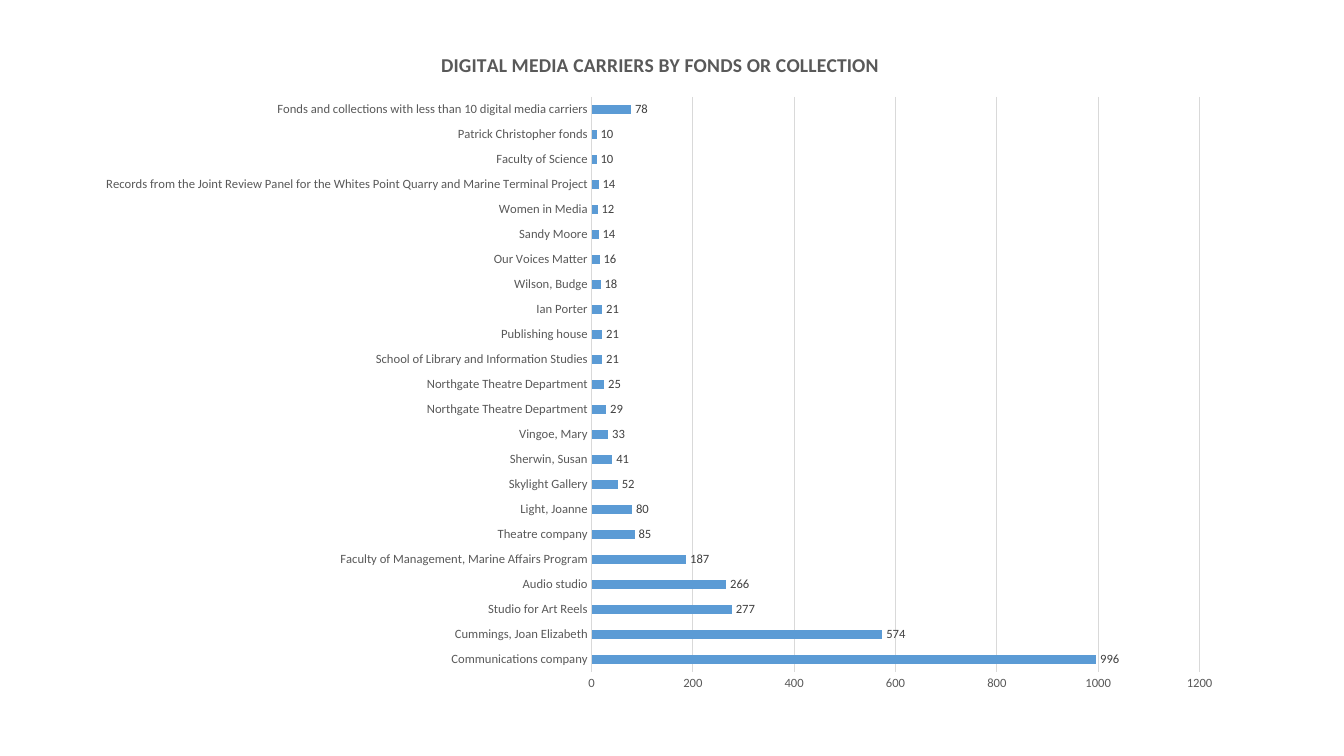
"""Build a slide with a bar chart of digital media carriers by fonds or collection."""
from dataclasses import dataclass
from typing import Any

from lxml import etree
from pptx import Presentation
from pptx import util as u
from pptx.chart import data as chart_data
from pptx.dml import color
from pptx.enum import chart as ch
from pptx.oxml import ns


@dataclass(frozen=True)
class Theme:
    """Colours, font and type sizes."""
    font: str = "Calibri"
    bar: str = "5B9BD5"
    grid: str = "D9D9D9"
    muted: str = "595959"
    value: str = "404040"
    base: str = "000000"
    title_size: int = 14
    base_size: int = 10
    label_size: int = 9


@dataclass(frozen=True)
class Holding:
    """One fonds or collection and its number of carriers."""
    name: str
    carriers: int


THEME = Theme()
TITLE = "DIGITAL MEDIA CARRIERS BY FONDS OR COLLECTION"
PLOT_AREA = {"x": 0.44, "y": 0.1, "w": 0.53, "h": 0.85}
HOLDINGS = [
    Holding("Communications company", 996),
    Holding("Cummings, Joan Elizabeth", 574),
    Holding("Studio for Art Reels", 277),
    Holding("Audio studio", 266),
    Holding("Faculty of Management, Marine Affairs Program", 187),
    Holding("Theatre company", 85),
    Holding("Light, Joanne", 80),
    Holding("Skylight Gallery", 52),
    Holding("Sherwin, Susan", 41),
    Holding("Vingoe, Mary", 33),
    Holding("Northgate Theatre Department", 29),
    Holding("Northgate Theatre Department", 25),
    Holding("School of Library and Information Studies", 21),
    Holding("Publishing house", 21),
    Holding("Ian Porter", 21),
    Holding("Wilson, Budge", 18),
    Holding("Our Voices Matter", 16),
    Holding("Sandy Moore", 14),
    Holding("Women in Media", 12),
    Holding("Records from the Joint Review Panel for the Whites Point Quarry and Marine Terminal Project", 14),
    Holding("Faculty of Science", 10),
    Holding("Patrick Christopher fonds", 10),
    Holding("Fonds and collections with less than 10 digital media carriers", 78),
]


def set_attrs(obj: Any, values: dict[str, Any]) -> None:
    """Set each named attribute on the object."""
    for name, value in values.items():
        setattr(obj, name, value)


def style_font(font: Any, size: int, rgb: str, bold: bool = False) -> None:
    """Apply the theme font with a size and colour."""
    set_attrs(font, {"name": THEME.font, "size": u.Pt(size), "bold": bold})
    font.color.rgb = color.RGBColor.from_string(rgb)


def style_line(line: Any) -> None:
    """Draw a thin line in the grid colour."""
    line.color.rgb = color.RGBColor.from_string(THEME.grid)
    line.width = u.Pt(0.75)


def style_axis(axis: Any, gridlines: bool) -> None:
    """Format an axis without tick marks."""
    set_attrs(axis, {
        "major_tick_mark": ch.XL_TICK_MARK.NONE,
        "minor_tick_mark": ch.XL_TICK_MARK.NONE,
        "has_major_gridlines": gridlines,
    })
    style_font(axis.tick_labels.font, THEME.label_size, THEME.muted)
    if gridlines:
        style_line(axis.major_gridlines.format.line)
        axis.format.line.fill.background()
    else:
        style_line(axis.format.line)


def place_plot(chart: Any) -> None:
    """Fix the inner plot area as fractions of the chart."""
    area = chart.element.find(".//" + ns.qn("c:plotArea"))
    for old in area.findall(ns.qn("c:layout")):
        area.remove(old)
    layout = etree.Element(ns.qn("c:layout"))
    area.insert(0, layout)
    manual = etree.SubElement(layout, ns.qn("c:manualLayout"))
    settings = {"layoutTarget": "inner", "xMode": "edge", "yMode": "edge", **PLOT_AREA}
    for tag, value in settings.items():
        etree.SubElement(manual, ns.qn(f"c:{tag}"), val=str(value))


def add_holdings_chart(s: Any, holdings: list[Holding]) -> None:
    """Add the bar chart with its title, axes and value labels."""
    data = chart_data.CategoryChartData()
    data.categories = [h.name for h in holdings]
    data.add_series("Series 1", [h.carriers for h in holdings])
    box = [u.Inches(n) for n in (0.86, 0.29, 11.38, 6.71)]
    chart = s.shapes.add_chart(ch.XL_CHART_TYPE.BAR_CLUSTERED, *box, data).chart
    set_attrs(chart, {"has_legend": False, "has_title": True})
    style_font(chart.font, THEME.base_size, THEME.base)

    p = chart.chart_title.text_frame.paragraphs[0]
    r = p.add_run()
    r.text = TITLE
    style_font(r.font, THEME.title_size, THEME.muted, bold=True)

    style_axis(chart.category_axis, gridlines=False)
    style_axis(chart.value_axis, gridlines=True)
    set_attrs(chart.value_axis, {"minimum_scale": 0, "maximum_scale": 1200, "major_unit": 200})

    plot = chart.plots[0]
    set_attrs(plot, {"gap_width": 182, "vary_by_categories": False, "has_data_labels": True})
    set_attrs(plot.data_labels, {"show_value": True, "position": ch.XL_LABEL_POSITION.OUTSIDE_END})
    style_font(plot.data_labels.font, THEME.label_size, THEME.value)
    fill = plot.series[0].format.fill
    fill.solid()
    fill.fore_color.rgb = color.RGBColor.from_string(THEME.bar)
    place_plot(chart)


def main() -> None:
    """Create and save the presentation."""
    prs = Presentation()
    set_attrs(prs, {"slide_width": u.Inches(13.33), "slide_height": u.Inches(7.5)})
    s = prs.slides.add_slide(prs.slide_layouts[6])
    add_holdings_chart(s, HOLDINGS)
    prs.save("out.pptx")


if __name__ == "__main__":
    main()
